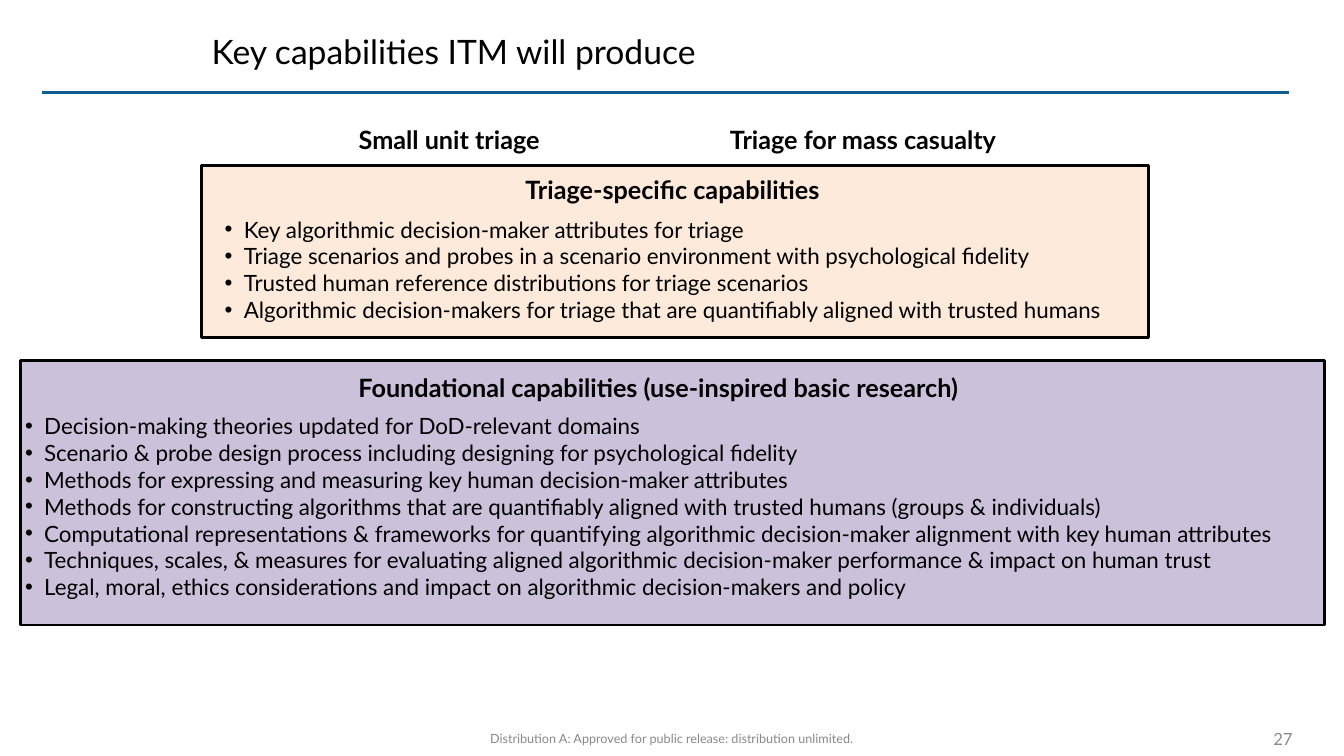
from lxml.etree import SubElement
from pptx import Presentation
from pptx.dml.color import RGBColor
from pptx.enum.shapes import MSO_CONNECTOR, MSO_SHAPE
from pptx.enum.text import MSO_ANCHOR, PP_ALIGN
from pptx.oxml.ns import qn
from pptx.util import Inches, Pt

BLACK = RGBColor(0x00, 0x00, 0x00)
GRAY = RGBColor(0x89, 0x89, 0x89)
BLUE = RGBColor(0x0F, 0x5E, 0x90)
PEACH = RGBColor(0xFD, 0xEA, 0xDA)
LAVENDER = RGBColor(0xCC, 0xC1, 0xDA)

TRIAGE_CAPABILITIES = [
    "Key algorithmic decision-maker attributes for triage",
    "Triage scenarios and probes in a scenario environment with psychological fidelity",
    "Trusted human reference distributions for triage scenarios",
    "Algorithmic decision-makers for triage that are quantifiably aligned with trusted humans",
]
FOUNDATIONAL_CAPABILITIES = [
    "Decision-making theories updated for DoD-relevant domains",
    "Scenario & probe design process including designing for psychological fidelity",
    "Methods for expressing and measuring key human decision-maker attributes",
    "Methods for constructing algorithms that are quantifiably aligned with trusted humans "
    "(groups & individuals)",
    "Computational representations & frameworks for quantifying algorithmic decision-maker "
    "alignment with key human attributes",
    "Techniques, scales, & measures for evaluating aligned algorithmic decision-maker "
    "performance & impact on human trust",
    "Legal, moral, ethics considerations and impact on algorithmic decision-makers and policy",
]


class CapabilitySlide:
    font_name = "Lato"
    bullet_indent = Inches(0.19)

    def __init__(self, presentation):
        self.slide = presentation.slides.add_slide(presentation.slide_layouts[6])

    def rule(self, left, right, top):
        connector = self.slide.shapes.add_connector(
            MSO_CONNECTOR.STRAIGHT, Inches(left), Inches(top), Inches(right), Inches(top))
        connector.line.color.rgb = BLUE
        connector.line.width = Pt(1.75)
        SubElement(connector._element.spPr, qn("a:effectLst"))

    def panel(self, left, top, width, height, color):
        shape = self.slide.shapes.add_shape(
            MSO_SHAPE.RECTANGLE, Inches(left), Inches(top), Inches(width), Inches(height))
        shape.shadow.inherit = False
        shape.fill.solid()
        shape.fill.fore_color.rgb = color
        shape.line.color.rgb = BLACK
        shape.line.width = Pt(2)

    def text(self, left, top, width, height, lines, size, color=BLACK, bold=False,
             alignment=PP_ALIGN.LEFT, anchor=MSO_ANCHOR.TOP, bulleted=False):
        text_box = self.slide.shapes.add_textbox(
            Inches(left), Inches(top), Inches(width), Inches(height))
        text_frame = text_box.text_frame
        text_frame.word_wrap = True
        text_frame.vertical_anchor = anchor
        text_frame.text = "\n".join(lines)
        for paragraph in text_frame.paragraphs:
            paragraph.alignment = alignment
            if bulleted:
                self.bullet(paragraph)
            for run in paragraph.runs:
                run.font.name = self.font_name
                run.font.size = Pt(size)
                run.font.bold = bold
                run.font.color.rgb = color

    def bullet(self, paragraph):
        properties = paragraph._p.get_or_add_pPr()
        properties.set("marL", str(self.bullet_indent))
        properties.set("indent", str(-self.bullet_indent))
        SubElement(properties, qn("a:buFont"), typeface="Arial")
        SubElement(properties, qn("a:buChar"), char="•")

    def heading(self, left, top, width, words):
        self.text(left, top, width, 0.4, [words], 18, bold=True, alignment=PP_ALIGN.CENTER)

    def bullets(self, left, top, width, height, lines):
        self.text(left, top, width, height, lines, 16, bulleted=True)

    def footer(self, left, top, width, height, words, size, alignment):
        self.text(left, top, width, height, [words], size, GRAY,
                  alignment=alignment, anchor=MSO_ANCHOR.MIDDLE)


def main():
    presentation = Presentation()
    presentation.slide_width = Inches(13.33)
    presentation.slide_height = Inches(7.5)
    page = CapabilitySlide(presentation)

    page.rule(0.42, 12.78, 0.92)
    page.text(2, 0.17, 10.78, 0.67, ["Key capabilities ITM will produce"], 24,
              anchor=MSO_ANCHOR.MIDDLE)
    page.heading(3.21, 1.18, 2.49, "Small unit triage")
    page.heading(6.57, 1.18, 3.98, "Triage for mass casualty")

    page.panel(2, 1.64, 9.39, 1.71, PEACH)
    page.heading(2.91, 1.68, 7.52, "Triage-specific capabilities")
    page.bullets(2.13, 2.09, 9.26, 1.18, TRIAGE_CAPABILITIES)

    page.panel(0.2, 3.58, 12.94, 2.62, LAVENDER)
    page.heading(0.2, 3.64, 12.66, "Foundational capabilities (use-inspired basic research)")
    page.bullets(0.15, 4.04, 13.22, 1.99, FOUNDATIONAL_CAPABILITIES)

    page.footer(1.94, 7.16, 9.44, 0.33,
                "Distribution A: Approved for public release: distribution unlimited.",
                9, PP_ALIGN.CENTER)
    page.footer(11.81, 7.17, 1.11, 0.32, "27", 12, PP_ALIGN.RIGHT)
    presentation.save("out.pptx")


if __name__ == "__main__":
    main()
